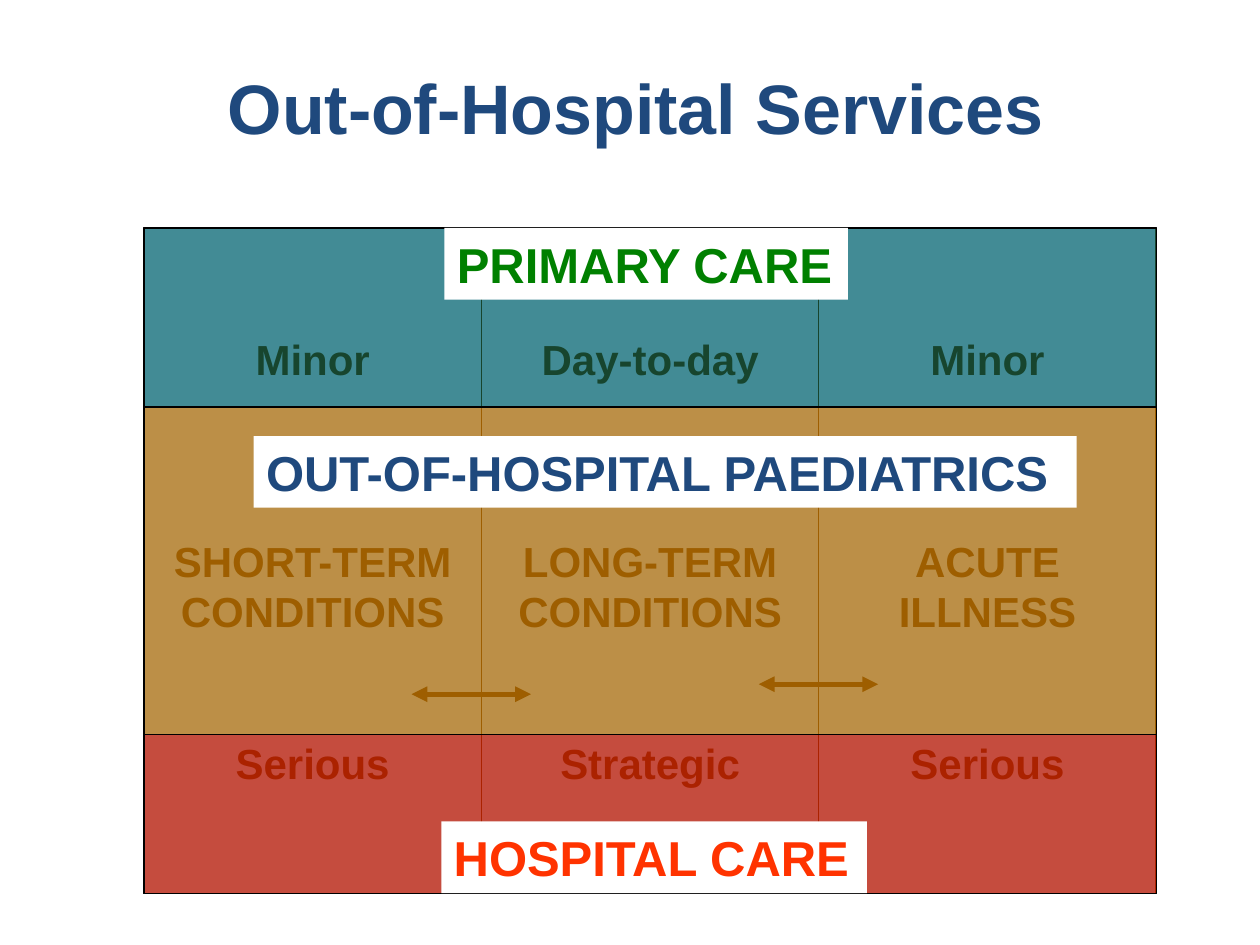
import pptx
import pptx.util
from lxml import etree
from pptx.dml.color import RGBColor
from pptx.enum.shapes import MSO_CONNECTOR, MSO_SHAPE
from pptx.enum.text import MSO_ANCHOR, PP_ALIGN
from pptx.oxml.ns import qn

Pt = pptx.util.Pt
HUES = {"ink": "000000", "paper": "FFFFFF", "base": "4F81BD", "navy": "1F497D",
        "red": "FF3300", "teal": "339966", "green": "008000", "gold": "FF9900"}
LEFT, TOP, WIDE = 82.3, 130.3, 192.8


def add_box(left, top, width, height, fill, alpha=None, edge=True):
    """Add a flat rectangle; alpha is its opacity in percent."""
    box = slide.shapes.add_shape(MSO_SHAPE.RECTANGLE, Pt(left), Pt(top), Pt(width), Pt(height))
    box.shadow.inherit = False
    box.fill.solid()
    box.fill.fore_color.rgb = RGBColor.from_string(HUES[fill])
    if alpha:
        tint = box.fill._xPr.find(".//" + qn("a:srgbClr"))
        etree.SubElement(tint, qn("a:alpha"), val=str(alpha * 1000))
    if edge:
        box.line.color.rgb = RGBColor.from_string(HUES["ink"])
        box.line.width = Pt(0.75)
    else:
        box.line.fill.background()
    return box


def set_font(para, size, hue, align):
    para.alignment = align
    font = para.font
    font.name, font.size, font.bold = "Arial", Pt(size), True
    font.color.rgb = RGBColor.from_string(HUES[hue])


deck = pptx.Presentation()
deck.slide_width, deck.slide_height = Pt(720), Pt(540)
slide = deck.slides.add_slide(deck.slide_layouts[5])

title = slide.shapes.title
title.left, title.top, title.width, title.height = Pt(14.4), Pt(33), Pt(697.7), Pt(55.4)
title.text_frame.text = "Out-of-Hospital Services"
title.text_frame.vertical_anchor = MSO_ANCHOR.MIDDLE
set_font(title.text_frame.paragraphs[0], 40, "navy", PP_ALIGN.CENTER)

# Columns: the gap before each line is a whole number of line heights
LEAD = 28.8
GAPS = [0, 3, 0, 2]
columns = [
    ["Minor", "SHORT-TERM", "CONDITIONS", "Serious"],
    ["Day-to-day", "LONG-TERM", "CONDITIONS", "Strategic"],
    ["Minor", "ACUTE", "ILLNESS", "Serious"],
]
for i, lines in enumerate(columns):
    frame = add_box(LEFT + i * WIDE, TOP, WIDE, 380.2, "base").text_frame
    frame.word_wrap = False
    frame.vertical_anchor = MSO_ANCHOR.MIDDLE
    frame.text = "\n".join(lines)
    for para, gap in zip(frame.paragraphs, GAPS):
        set_font(para, 24, "ink", PP_ALIGN.CENTER)
        para.line_spacing = Pt(LEAD)
        para.space_before = Pt(gap * LEAD)

# Double arrows across the column borders
for left, top in [(433.6, 391), (235.2, 396.7)]:
    arrow = slide.shapes.add_connector(
        MSO_CONNECTOR.STRAIGHT, Pt(left), Pt(top), Pt(left + 68.2), Pt(top))
    arrow.line.color.rgb = RGBColor.from_string(HUES["ink"])
    arrow.line.width = Pt(3)
    for end in ("a:headEnd", "a:tailEnd"):
        etree.SubElement(arrow.line._get_or_add_ln(), qn(end), type="triangle")
    etree.SubElement(arrow._element.spPr, qn("a:effectLst"))

# Bands of care, each with its label: top, height, tint, opacity,
# then label text, colour, left, top, width
bands = [
    (419.8, 90.7, "red", 67, "HOSPITAL CARE", "red", 252.2, 469.4, 243.2),
    (TOP, 102.3, "teal", 45, "PRIMARY CARE", "green", 254, TOP, 230.5),
    (232.6, 187.2, "gold", 62, "OUT-OF-HOSPITAL PAEDIATRICS", "navy", 145, 249.2, 470.2),
]
for top, height, tint, alpha, text, hue, left, rise, width in bands:
    add_box(LEFT, top, 3 * WIDE, height, tint, alpha)
    frame = add_box(left, rise, width, 41, "paper", edge=False).text_frame
    frame.word_wrap = True
    frame.margin_right = 0
    frame.vertical_anchor = MSO_ANCHOR.MIDDLE
    frame.text = text
    set_font(frame.paragraphs[0], 28, hue, PP_ALIGN.LEFT)

deck.save("out.pptx")
